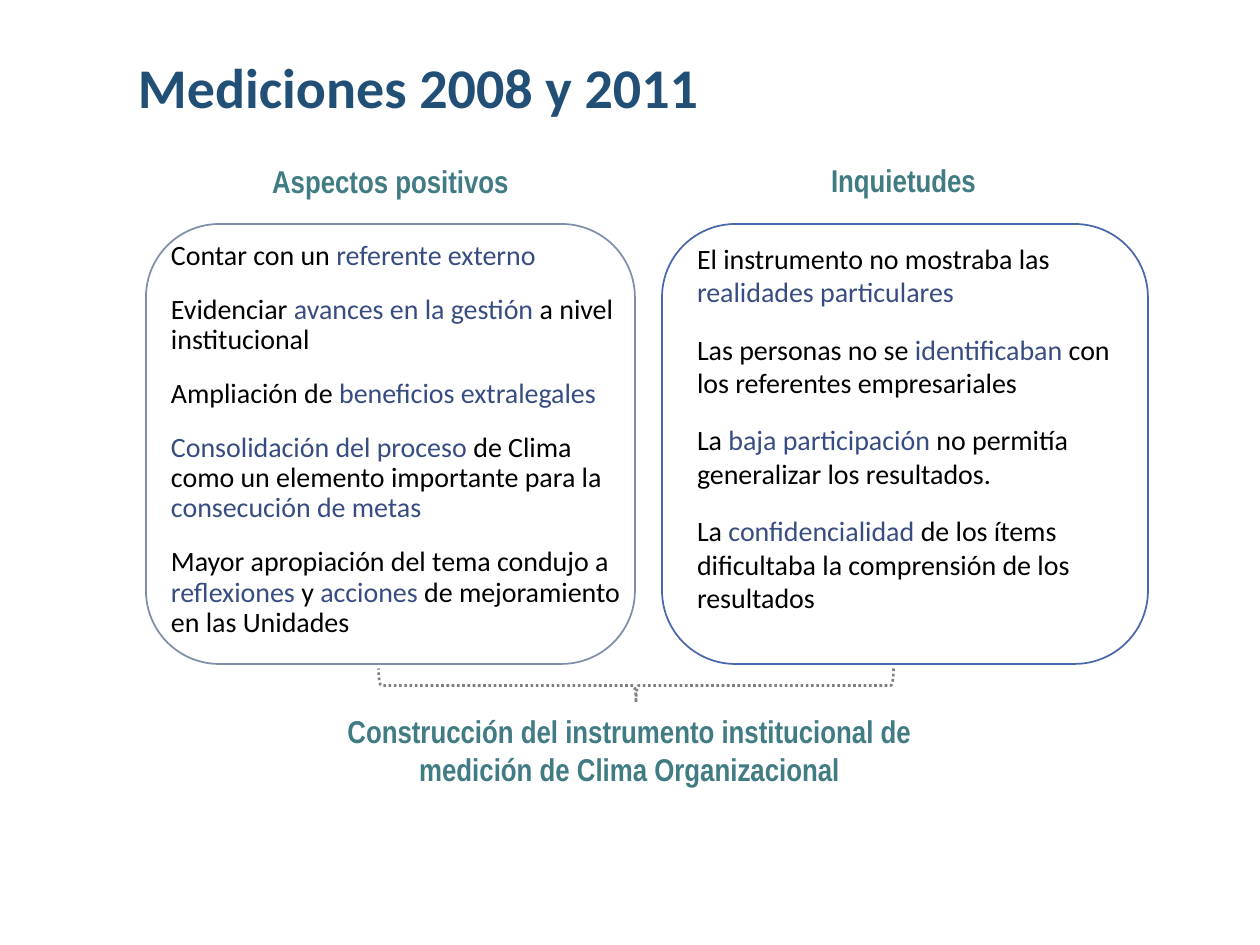
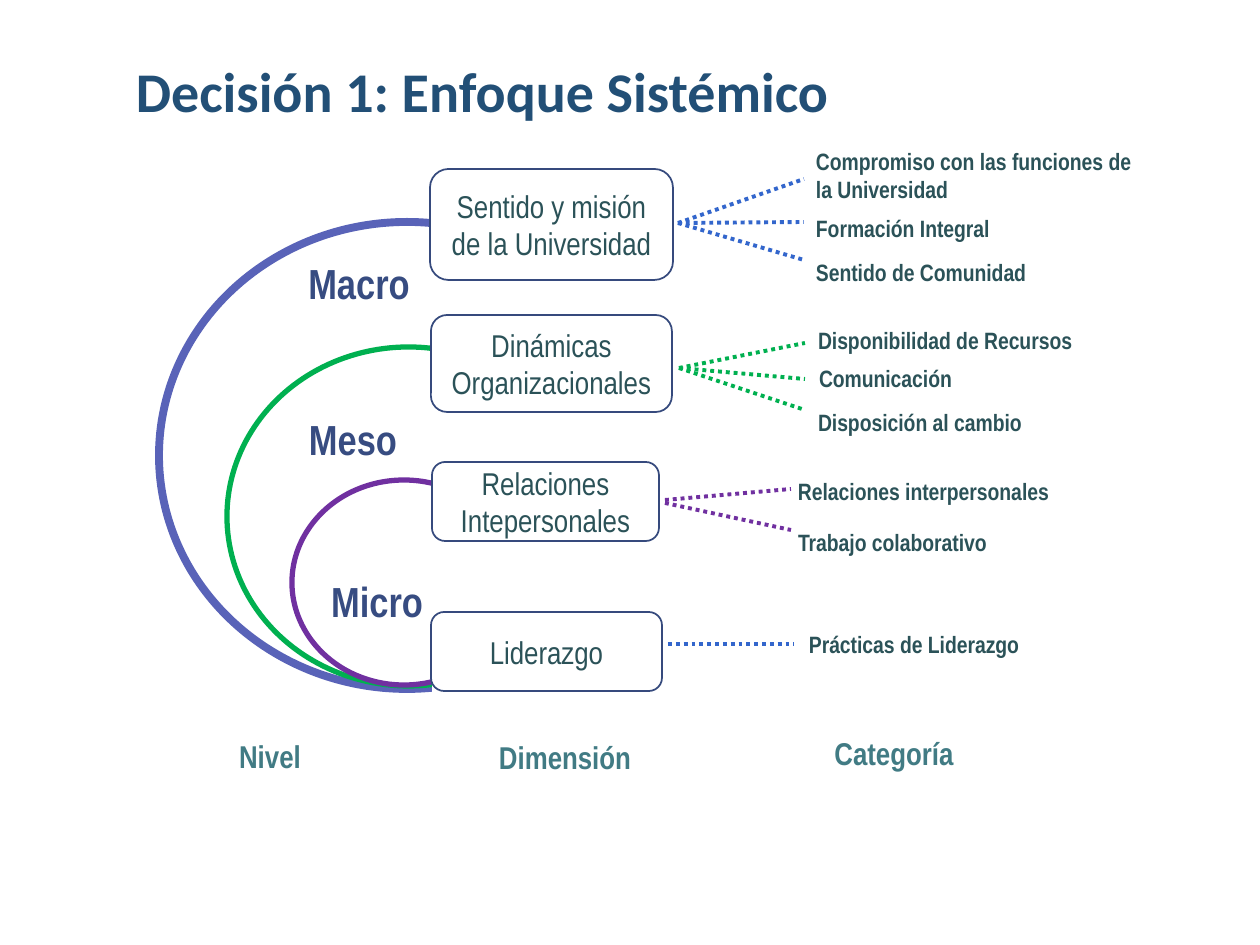
from lxml import etree
from pptx import Presentation
from pptx.dml.color import RGBColor
from pptx.enum.dml import MSO_LINE
from pptx.enum.shapes import MSO_CONNECTOR, MSO_SHAPE
from pptx.enum.text import MSO_ANCHOR, MSO_AUTO_SIZE, PP_ALIGN
from pptx.oxml.ns import qn
from pptx.util import Pt

LEFT, CENTER, RIGHT = PP_ALIGN.LEFT, PP_ALIGN.CENTER, PP_ALIGN.RIGHT
TOP, MIDDLE = MSO_ANCHOR.TOP, MSO_ANCHOR.MIDDLE
NO_AUTOFIT = MSO_AUTO_SIZE.NONE
DOT = MSO_LINE.ROUND_DOT
ROUND_BOX, ELLIPSE = MSO_SHAPE.ROUNDED_RECTANGLE, MSO_SHAPE.OVAL
RECTANGLE, BRACE = MSO_SHAPE.RECTANGLE, MSO_SHAPE.RIGHT_BRACE
STRAIGHT = MSO_CONNECTOR.STRAIGHT
TWO_CONTENT, TITLE_ONLY = 3, 5

EMU_PER_PX = 914400 / 126
SLIDE_SIZE = (1260, 945)
BRANCH_LENGTH = 126

# Shared colours and text styles
WHITE, BLACK, NAVY, GREY = "FFFFFF", "000000", "374C81", "7F7F7F"
BLUE, GREEN, PURPLE, OUTLINE = "3366CC", "00B050", "7030A0", "364A7D"


def text_style(name, size, color, bold=True):
    return {"name": name, "size": Pt(size), "bold": bold, "color": color}


TITLE = text_style("Calibri", 32, "224F76")
BODY = text_style("Calibri", 16, BLACK, False)
HEADING = text_style("Arial Narrow", 18, "417B84")
LEVEL = text_style("Arial Narrow", 24, NAVY)
DIMENSION = text_style("Arial Narrow", 18, "2B5258", False)
CATEGORY = text_style("Arial Narrow", 13.5, "2B5258")

# Slide 1: asterisks enclose the highlighted words
POSITIVES = [
    "Contar con un *referente externo*",
    "Evidenciar *avances en la gestión *a nivel institucional",
    "Ampliación de *beneficios extralegales*",
    "*Consolidación del proceso *de Clima como un elemento importante "
    "para la *consecución de metas*",
    "Mayor apropiación del tema condujo a *reflexiones* y *acciones* "
    "de mejoramiento en las Unidades",
]
CONCERNS = [
    "El instrumento no mostraba las *realidades particulares*",
    "Las personas no se *identificaban* con los referentes empresariales",
    "La *baja participación *no permitía generalizar los resultados.",
    "La *confidencialidad *de los ítems dificultaba la comprensión "
    "de los resultados",
]

# Slide 2: arcs are (box, color, width), levels and columns are (text, box)
ARCS = [
    ((159, 222, 496, 467), "5963B8", 4.5),
    ((227, 347, 363, 339), GREEN, 3),
    ((292, 480, 224, 205), PURPLE, 3),
]
LEVELS = [
    ("Macro", (289, 252, 140, 63)),
    ("Meso", (286, 408, 134, 63)),
    ("Micro", (318, 570, 118, 63)),
]
COLUMNS = [
    ("Nivel", (190, 731, 160, 50)),
    ("Dimensión", (485, 732, 160, 50)),
    ("Categoría", (814, 728, 160, 50)),
]
# Dimension: lines, box, color, branch x, and its branches as
# (start y, end y, category, category box)
DIMENSIONS = [
    (["Sentido y misión", "de la Universidad"], (430, 169, 243, 111), BLUE, 678, [
        (223, 179, "Compromiso con las funciones de la Universidad",
         (803, 141, 345, 71)),
        (223, 222, "Formación Integral", (803, 208, 261, 42)),
        (223, 260, "Sentido de Comunidad", (803, 252, 261, 42)),
    ]),
    (["Dinámicas Organizacionales"], (431, 315, 241, 97), GREEN, 679, [
        (368, 343, "Disponibilidad de Recursos", (805, 320, 323, 42)),
        (368, 379, "Comunicación", (806, 358, 261, 42)),
        (368, 410, "Disposición al cambio", (805, 402, 261, 42)),
    ]),
    (["Relaciones Intepersonales"], (432, 462, 227, 79), PURPLE, 665, [
        (500, 489, "Relaciones interpersonales", (785, 471, 329, 42)),
        (503, 530, "Trabajo colaborativo", (785, 522, 261, 42)),
    ]),
    (["Liderazgo"], (431, 612, 231, 79), BLUE, 668, [
        (644, 644, "Prácticas de Liderazgo", (796, 624, 242, 71)),
    ]),
]


def px(length):
    return round(length * EMU_PER_PX)


def rgb(color):
    return RGBColor.from_string(color)


def set_attributes(target, values):
    for name, value in values.items():
        setattr(target, name, value)


def format_font(font, style):
    for name, value in style.items():
        if name == "color":
            font.color.rgb = rgb(value)
        else:
            setattr(font, name, value)


def format_line(line, color, width, dash=None):
    line.color.rgb = rgb(color)
    line.width = Pt(width)
    if dash:
        line.dash_style = dash


def place(shape, box):
    names = ("left", "top", "width", "height")
    set_attributes(shape, dict(zip(names, map(px, box))))


def write_text(shape, lines, style, align=LEFT, anchor=TOP, margins=(13, 6),
               gap=0, spacing=1.0):
    """Fill a shape with paragraphs, colouring the words between asterisks."""
    frame = shape.text_frame
    side, end = map(px, margins)
    set_attributes(frame, {
        "word_wrap": True, "auto_size": NO_AUTOFIT, "vertical_anchor": anchor,
        "margin_left": side, "margin_right": side,
        "margin_top": end, "margin_bottom": end,
    })
    for index, line in enumerate(lines):
        paragraph = frame.add_paragraph() if index else frame.paragraphs[0]
        properties = paragraph._p.get_or_add_pPr()
        properties.set("marL", "0")
        properties.set("indent", "0")
        etree.SubElement(properties, qn("a:buNone"))
        set_attributes(paragraph, {
            "alignment": align, "line_spacing": spacing,
            "space_before": Pt(gap if index else 0),
        })
        for part, words in enumerate(line.split("*")):
            if words:
                run = paragraph.add_run()
                run.text = words
                format_font(run.font, {**style, "color": NAVY} if part % 2 else style)


def add_title(slide, text, box, align):
    title = slide.shapes.title
    place(title, box)
    write_text(title, [text], TITLE, align)


def add_label(slide, text, box, style, align=CENTER):
    label = slide.shapes.add_textbox(*map(px, box))
    write_text(label, [text], style, align)


def add_outline(slide, kind, box, color, width, fill=None, dash=None):
    shape = slide.shapes.add_shape(kind, *map(px, box))
    shape.shadow.inherit = False
    if fill:
        shape.fill.solid()
        shape.fill.fore_color.rgb = rgb(fill)
    else:
        shape.fill.background()
    format_line(shape.line, color, width, dash)
    return shape


def add_card(slide, card_box, color, placeholder, text_box, lines, spacing):
    add_outline(slide, ROUND_BOX, card_box, color, 1, WHITE)
    place(placeholder, text_box)
    slide.shapes._spTree.append(placeholder._element)  # text above its card
    write_text(placeholder, lines, BODY, anchor=MIDDLE, margins=(13, 13),
               gap=13.5, spacing=spacing)


def add_branch(slide, x, start_y, end_y, color):
    ends = (x, start_y, x + BRANCH_LENGTH, end_y)
    branch = slide.shapes.add_connector(STRAIGHT, *map(px, ends))
    format_line(branch.line, color, 2.25, DOT)
    etree.SubElement(branch._element.spPr, qn("a:effectLst"))


def build_measurements(presentation):
    slide = presentation.slides.add_slide(presentation.slide_layouts[TWO_CONTENT])
    positives, concerns = list(slide.placeholders)[1:3]
    add_title(slide, "Mediciones 2008 y 2011", (100, 47, 612, 81), RIGHT)

    # Two cards with their headings
    add_card(slide, (662, 224, 486, 440), "4A66AC",
             concerns, (684, 209, 476, 438), CONCERNS, 1.0)
    add_card(slide, (146, 224, 489, 440), "7F8FA9",
             positives, (158, 246, 494, 388), POSITIVES, 0.9)
    add_label(slide, "Aspectos positivos", (258, 156, 265, 50), HEADING)
    add_label(slide, "Inquietudes", (818, 155, 171, 50), HEADING)

    # Brace leading to the conclusion
    brace = add_outline(slide, BRACE, (619, 428, 34, 515), GREY, 1.5, dash=DOT)
    brace.rotation = 90
    brace.adjustments[0] = 0.08
    brace.adjustments[1] = 0.5
    add_label(slide, "Construcción del instrumento institucional de medición "
              "de Clima Organizacional", (334, 706, 591, 89), HEADING)


def build_systemic_approach(presentation):
    slide = presentation.slides.add_slide(presentation.slide_layouts[TITLE_ONLY])
    add_title(slide, "Decisión 1: Enfoque Sistémico", (86, 50, 793, 81), CENTER)

    # Nested arcs, cut on the right by a white panel
    for box, color, width in ARCS:
        add_outline(slide, ELLIPSE, box, color, width)
    add_outline(slide, RECTANGLE, (437, 173, 248, 591), WHITE, 6, WHITE)

    # Levels and column names
    for text, box in LEVELS:
        add_label(slide, text, box, LEVEL)
    for text, box in COLUMNS:
        add_label(slide, text, box, HEADING)

    # Dimensions and the categories that branch from them
    for lines, box, color, x, branches in DIMENSIONS:
        dimension = add_outline(slide, ROUND_BOX, box, OUTLINE, 1, WHITE)
        write_text(dimension, lines, DIMENSION, CENTER, MIDDLE)
        for start_y, end_y, category, category_box in branches:
            add_branch(slide, x, start_y, end_y, color)
            add_label(slide, category, category_box, CATEGORY, LEFT)


def main():
    presentation = Presentation()
    presentation.slide_width, presentation.slide_height = map(px, SLIDE_SIZE)
    build_measurements(presentation)
    build_systemic_approach(presentation)
    presentation.save("out.pptx")


if __name__ == "__main__":
    main()
